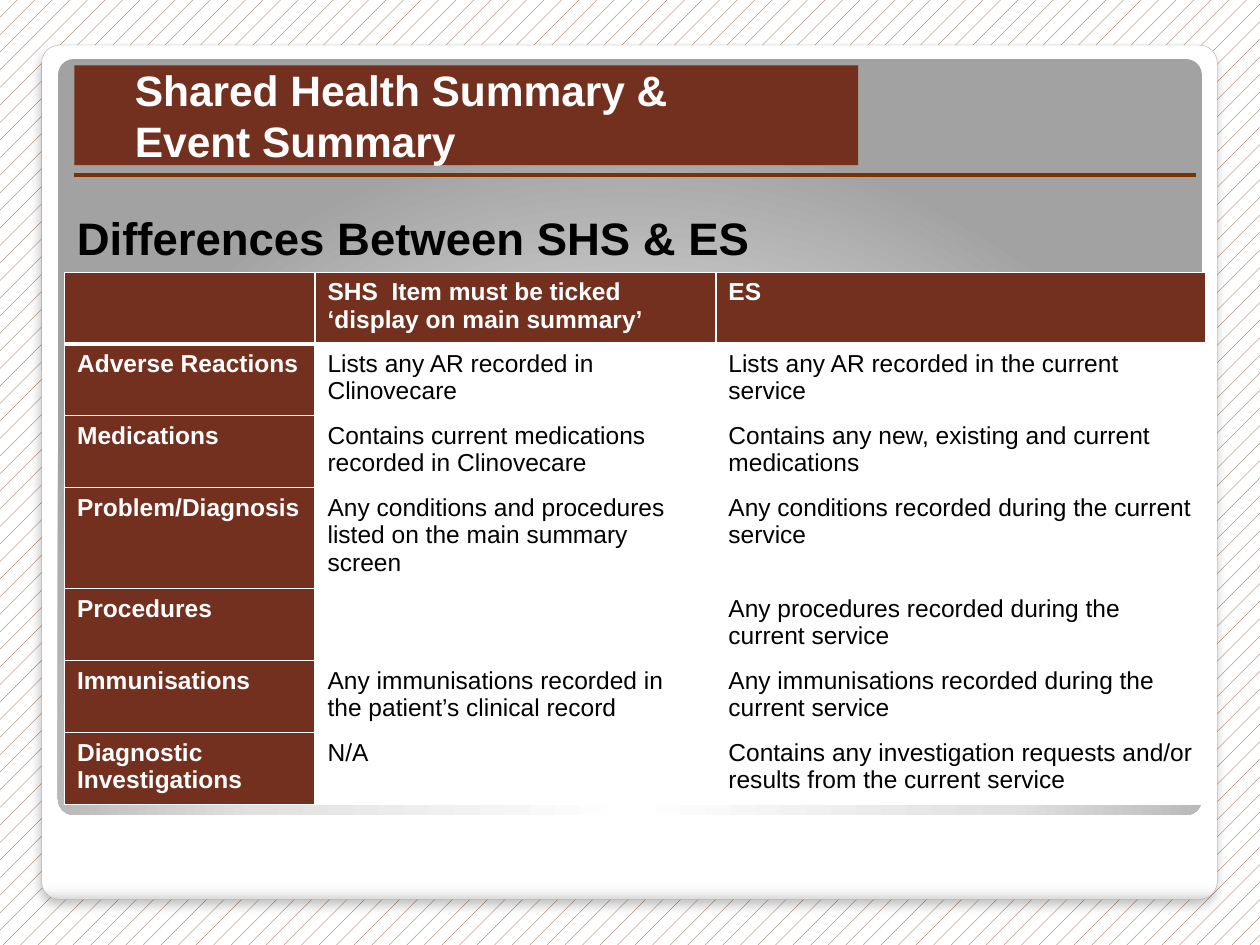
"""Build a slide that compares the Shared Health Summary with the Event Summary."""
from lxml import etree
from pptx import Presentation
from pptx.dml.color import RGBColor
from pptx.enum.dml import MSO_PATTERN
from pptx.enum.shapes import MSO_CONNECTOR, MSO_SHAPE
from pptx.enum.text import MSO_ANCHOR, MSO_AUTO_SIZE, PP_ALIGN
from pptx.oxml import parse_xml
from pptx.oxml.ns import nsdecls, qn
from pptx.util import Cm, Pt

DOTS = MSO_PATTERN.PERCENT_5
ROUND = MSO_SHAPE.ROUNDED_RECTANGLE
STRAIGHT = MSO_CONNECTOR.STRAIGHT
MIDDLE = MSO_ANCHOR.MIDDLE
FIT, FIXED = MSO_AUTO_SIZE.SHAPE_TO_FIT_TEXT, MSO_AUTO_SIZE.NONE
LEFT = PP_ALIGN.LEFT

WHITE = RGBColor(0xFF, 0xFF, 0xFF)
BLACK = RGBColor(0, 0, 0)
BROWN = RGBColor(0x74, 0x30, 0x1F)
RULE = RGBColor(0x78, 0x33, 0x00)
HATCH = RGBColor(0x79, 0x40, 0x22)
EDGE = RGBColor(0xA4, 0xA4, 0xA4)

TITLE = "\tShared Health Summary & \vEvent Summary"
HEADING = "Differences Between SHS & ES"
ROWS = [
    ("", "SHS  Item must be ticked ‘display on main summary’", "ES"),
    ("Adverse Reactions", "Lists any AR recorded in Clinovecare",
     "Lists any AR recorded in the current service"),
    ("Medications", "Contains current medications recorded in Clinovecare",
     "Contains any new, existing and current medications"),
    ("Problem/Diagnosis",
     "Any conditions and procedures listed on the main summary screen",
     "Any conditions recorded during the current service"),
    ("Procedures", "", "Any procedures recorded during the current service"),
    ("Immunisations",
     "Any immunisations recorded in the patient’s clinical record",
     "Any immunisations recorded during the current service"),
    ("Diagnostic Investigations", "N/A",
     "Contains any investigation requests and/or results from the current service"),
]
WIDTHS = [5.05, 8.08, 9.88]
HEIGHTS = [1.42, 1.45, 1.45, 2.03, 1.45, 1.45, 1.45]

CARD = dict(
    box=(0.84, 0.91, 23.7, 17.22),
    stops=[(0, "FFFFFF"), (98, "FFFFFF"), (99, "F7F7F7"), (100, "DADADA")],
    flow='<a:lin ang="5400000" scaled="0"/>')
PANEL = dict(
    box=(1.17, 1.19, 23.06, 15.24),
    stops=[(0, "FFFFFF"), (55, "E1E1E1"), (100, "A2A2A2")],
    flow='<a:path path="circle"><a:fillToRect l="50000" t="175000" '
         'r="50000" b="-75000"/></a:path>')
SHADE = (f'<a:outerShdw {nsdecls("a")} blurRad="{Pt(6)}" dist="{Pt(4)}" dir="5400000" '
         'rotWithShape="0"><a:srgbClr val="000000"><a:alpha val="25000"/>'
         '</a:srgbClr></a:outerShdw>')


def style(para, size, color, bold=True):
    look = dict(name="Arial", size=Pt(size), bold=bold)
    for run in para.runs:
        for key, val in look.items():
            setattr(run.font, key, val)
        run.font.color.rgb = color


def add_plate(slide, box, stops, flow):
    plate = slide.shapes.add_shape(ROUND, *map(Cm, box))
    plate.adjustments[0] = 0.021
    plate.shadow.inherit = False
    plate.line.fill.background()
    plate.fill.background()
    marks = "".join(f'<a:gs pos="{pos * 1000}"><a:srgbClr val="{tone}"/></a:gs>'
                    for pos, tone in stops)
    props = plate._element.spPr
    props.replace(props.find(qn("a:noFill")), parse_xml(
        f'<a:gradFill {nsdecls("a")} rotWithShape="1"><a:gsLst>{marks}</a:gsLst>'
        f'{flow}</a:gradFill>'))
    return plate


def add_rule(slide):
    rule = slide.shapes.add_connector(STRAIGHT, Cm(1.5), Cm(3.53), Cm(24.1), Cm(3.53))
    rule.line.color.rgb = RULE
    rule.line.width = Pt(2.25)
    etree.SubElement(rule._element.spPr, qn("a:effectLst"))


def set_title(slide):
    title = slide.shapes.title
    slide.shapes._spTree.append(title._element)
    title.left, title.top, title.width, title.height = map(Cm, (1.5, 1.32, 15.8, 2.01))
    title.fill.solid()
    title.fill.fore_color.rgb = BROWN
    frame = title.text_frame
    form = dict(margin_left=0, margin_right=Cm(0.25), margin_top=Cm(0.13),
                margin_bottom=Cm(0.13), vertical_anchor=MIDDLE,
                auto_size=FIXED, word_wrap=True)
    for key, val in form.items():
        setattr(frame, key, val)
    para = frame.paragraphs[0]
    para.text = TITLE
    para.alignment = LEFT
    props = para._p.get_or_add_pPr()
    props.set("marL", str(Cm(1.22)))
    props.set("indent", str(-Cm(1.22)))
    tabs = etree.SubElement(props, qn("a:tabLst"))
    etree.SubElement(tabs, qn("a:tab"), pos=str(Cm(1.24)), algn="l")
    style(para, 24.3, WHITE)
    for gap in para._p.findall(qn("a:br")):
        etree.SubElement(gap, qn("a:rPr"), sz="2430")


def add_heading(slide):
    frame = slide.shapes.add_textbox(*map(Cm, (1.3, 4.11, 23.01, 1.37))).text_frame
    frame.word_wrap = True
    frame.auto_size = FIT
    frame.text = HEADING
    style(frame.paragraphs[0], 26, BLACK)


def set_edge(cell, side, width):
    edge = etree.SubElement(cell._tc.get_or_add_tcPr(), qn(f"a:ln{side}"), w=str(Pt(width)))
    fill = etree.SubElement(edge, qn("a:solidFill"))
    etree.SubElement(fill, qn("a:srgbClr"), val=str(WHITE))


def add_grid(slide):
    grid = slide.shapes.add_table(
        len(ROWS), len(WIDTHS), Cm(1.3), Cm(5.49),
        Cm(sum(WIDTHS)), Cm(sum(HEIGHTS))).table
    for col, width in zip(grid.columns, WIDTHS):
        col.width = Cm(width)
    for r, (row, height) in enumerate(zip(ROWS, HEIGHTS)):
        grid.rows[r].height = Cm(height)
        for c, text in enumerate(row):
            cell = grid.cell(r, c)
            head = r == 0 or c == 0
            for side in "LRTB":
                thick = (r == 0 and side == "B") or (r == 1 and side == "T")
                set_edge(cell, side, 3 if thick else 1)
            cell.fill.solid()
            cell.fill.fore_color.rgb = BROWN if head else WHITE
            cell.text = text
            style(cell.text_frame.paragraphs[0], 14, WHITE if head else BLACK, head)


def main():
    deck = Presentation()
    deck.slide_width, deck.slide_height = Cm(25.4), Cm(19.05)
    slide = deck.slides.add_slide(deck.slide_layouts[5])
    back = slide.background.fill
    back.patterned()
    back.pattern = DOTS
    back.fore_color.rgb = HATCH
    back.back_color.rgb = WHITE
    card = add_plate(slide, **CARD)
    card.line.color.rgb = EDGE
    card.line.width = Pt(0.16)
    card._element.spPr.find(qn("a:effectLst")).append(parse_xml(SHADE))
    add_plate(slide, **PANEL)
    add_rule(slide)
    set_title(slide)
    add_heading(slide)
    add_grid(slide)
    deck.save("out.pptx")


if __name__ == "__main__":
    main()
